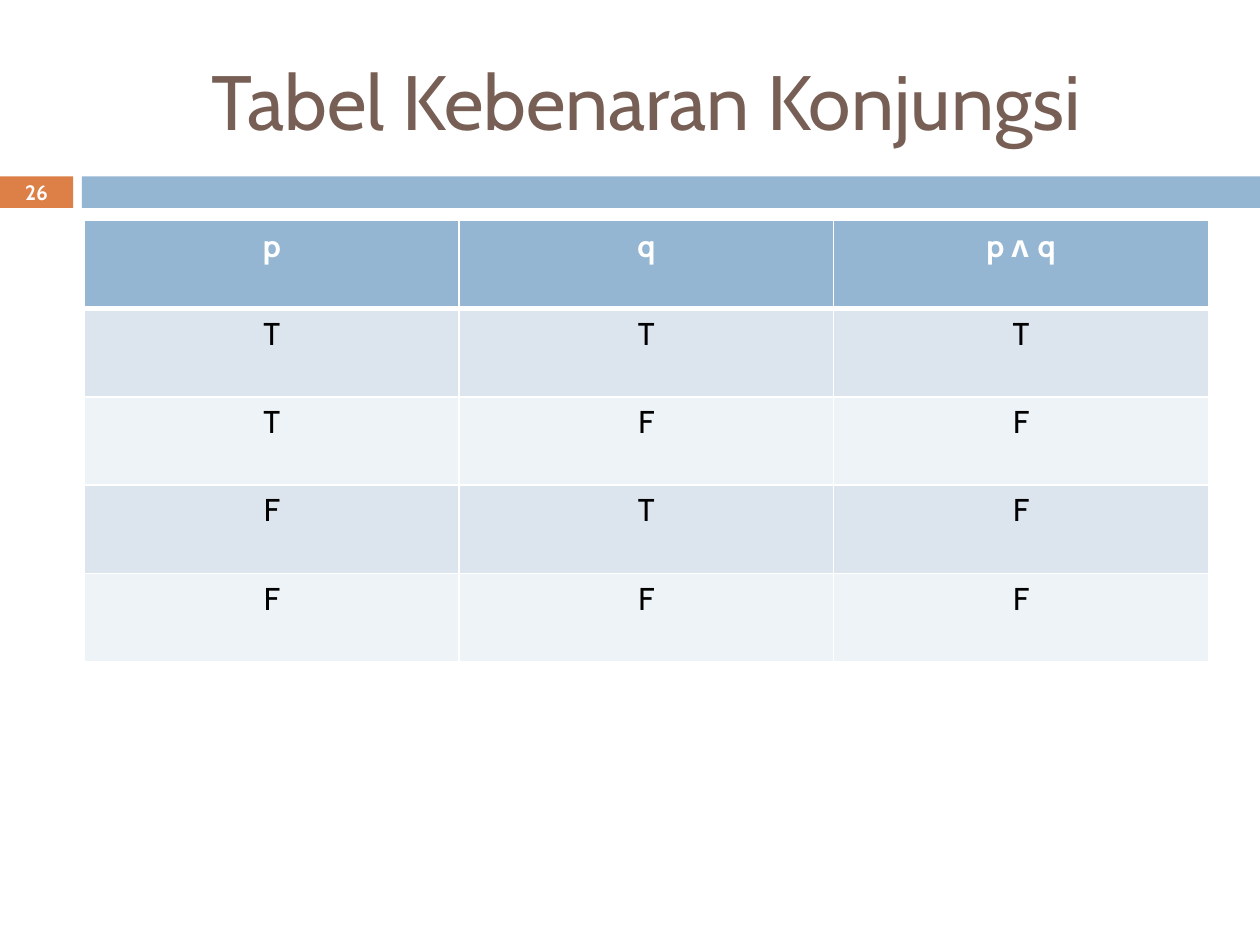
"""Build the truth table slide for logical conjunction."""
from lxml import etree
from pptx import Presentation, util as u
from pptx.dml.color import RGBColor
from pptx.enum import shapes, text
from pptx.oxml.ns import qn

BLUE = RGBColor(0x94, 0xB6, 0xD2)
ORANGE = RGBColor(0xDD, 0x80, 0x47)
BROWN = RGBColor(0x77, 0x5F, 0x55)
WHITE = RGBColor(0xFF, 0xFF, 0xFF)
BLACK = RGBColor(0, 0, 0)
BANDS = RGBColor(0xDC, 0xE5, 0xEE), RGBColor(0xEE, 0xF3, 0xF7)
FONT = "Cabin"
SYMBOL = "ᴧ "
HEAD = ["p"], ["q"], ["p ", SYMBOL, "q"]
TRUTH = "TTT", "TFF", "FTF", "FFF"


def write(frame, parts, size, color, bold=False):
    """Write centred runs into a text frame."""
    para = frame.paragraphs[0]
    para.alignment = text.PP_ALIGN.CENTER
    for part in parts:
        run = para.add_run()
        run.text = part
        font = run.font
        font.name = "Arial" if part == SYMBOL else FONT
        font.size = u.Pt(size)
        font.bold = bold
        font.color.rgb = color


def add_bar(slide, left, width, color):
    """Add a flat bar below the title."""
    bar = slide.shapes.add_shape(
        shapes.MSO_SHAPE.RECTANGLE,
        u.Inches(left), u.Inches(1.4), u.Inches(width), u.Inches(0.25))
    bar.shadow.inherit = False
    bar.fill.solid()
    bar.fill.fore_color.rgb = color
    bar.line.fill.background()


def add_label(slide, box, words, size, color, bold=False):
    """Add a text box centred both ways."""
    frame = slide.shapes.add_textbox(*map(u.Inches, box)).text_frame
    frame.word_wrap = True
    frame.vertical_anchor = text.MSO_ANCHOR.MIDDLE
    write(frame, [words], size, color, bold)


def set_edge(cell, side, width):
    """Draw one white cell border."""
    props = cell._tc.get_or_add_tcPr()
    line = etree.SubElement(props, qn("a:ln" + side), w=str(u.Pt(width)))
    fill = etree.SubElement(line, qn("a:solidFill"))
    etree.SubElement(fill, qn("a:srgbClr"), val=str(WHITE))


def add_table(slide):
    """Add the truth table with a header and banded rows."""
    rows = [HEAD, *TRUTH]
    table = slide.shapes.add_table(
        len(rows), len(HEAD),
        u.Inches(0.67), u.Inches(1.75), u.Inches(8.92), u.Inches(3.5)).table
    for i, row in enumerate(rows):
        top = i == 0
        for j, parts in enumerate(row):
            cell = table.cell(i, j)
            for side in "LRTB":
                thick = (top and side == "B") or (i == 1 and side == "T")
                set_edge(cell, side, 3 if thick else 1)
            cell.fill.solid()
            cell.fill.fore_color.rgb = BLUE if top else BANDS[(i - 1) % 2]
            write(cell.text_frame, parts, 18, WHITE if top else BLACK, top)


def main():
    """Build and save the slide."""
    deck = Presentation()
    deck.slide_width, deck.slide_height = u.Inches(10), u.Inches(7.5)
    slide = deck.slides.add_slide(deck.slide_layouts[6])
    add_bar(slide, 0, 0.58, ORANGE)
    add_bar(slide, 0.65, 9.35, BLUE)
    add_label(slide, (0.67, 0.25, 8.92, 1.08), "Tabel Kebenaran Konjungsi",
              44, BROWN)
    add_label(slide, (0, 1.39, 0.58, 0.27), "26", 11.9, WHITE, True)
    add_table(slide)
    deck.save("out.pptx")


if __name__ == "__main__":
    main()
